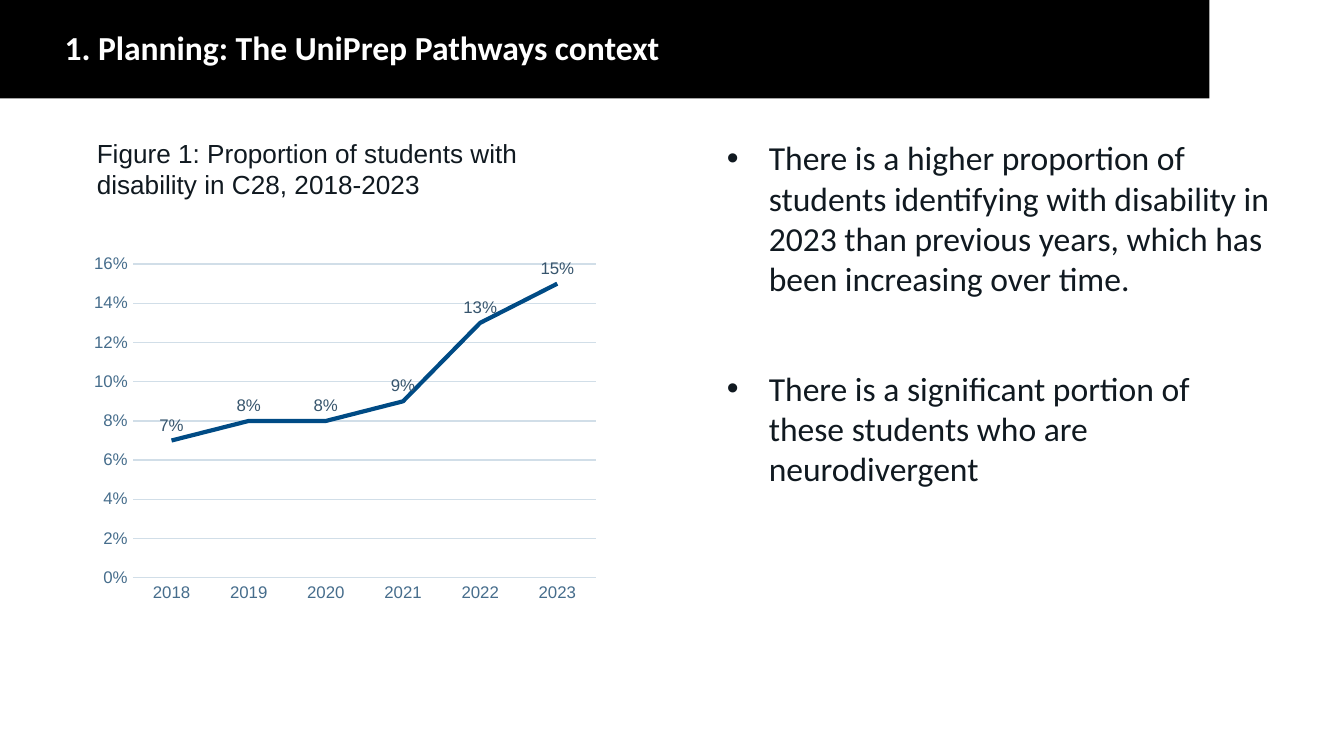
from dataclasses import dataclass

from lxml.etree import SubElement
from pptx import Presentation
from pptx.chart.data import CategoryChartData
from pptx.dml.color import RGBColor
from pptx.enum.chart import XL_CHART_TYPE, XL_LABEL_POSITION, XL_MARKER_STYLE, XL_TICK_MARK
from pptx.enum.shapes import MSO_SHAPE
from pptx.enum.text import MSO_ANCHOR
from pptx.oxml.ns import qn
from pptx.util import Cm, Pt


@dataclass(frozen=True)
class Theme:
    banner: str = "000000"
    banner_text: str = "FFFFFF"
    text: str = "101920"
    axis_text: str = "466D8C"
    label_text: str = "37556D"
    grid: str = "D1DEE8"
    series: str = "004B85"
    heading_font: str = "Calibri"
    figure_font: str = "Arial"
    body_size: int = 18
    caption_size: int = 14
    chart_size: int = 10
    axis_size: int = 9


THEME = Theme()


def set_font(font, name, size, color, bold=False):
    font.name = name
    font.size = Pt(size)
    font.bold = bold
    font.color.rgb = RGBColor.from_string(color)


def set_line(line, color, width):
    line.color.rgb = RGBColor.from_string(color)
    line.width = Pt(width)


def add_bullet(paragraph, indent):
    properties = paragraph._p.get_or_add_pPr()
    properties.set("marL", str(indent))
    properties.set("indent", str(-indent))
    SubElement(properties, qn("a:buFont"), typeface="Arial")
    SubElement(properties, qn("a:buChar"), char="•")


def add_text(slide, box, paragraphs, *, font, size, color, bold=False,
             anchor=MSO_ANCHOR.TOP, line_spacing=None, gap=0, bullet_indent=None):
    """Add a wrapping text box; gap is the space in points between paragraphs."""
    frame = slide.shapes.add_textbox(*box).text_frame
    frame.word_wrap = True
    frame.vertical_anchor = anchor
    for index, text in enumerate(paragraphs):
        paragraph = frame.add_paragraph() if index else frame.paragraphs[0]
        if index:
            paragraph.space_before = Pt(gap)
        if line_spacing:
            paragraph.line_spacing = line_spacing
        if bullet_indent:
            add_bullet(paragraph, bullet_indent)
        run = paragraph.add_run()
        run.text = text
        set_font(run.font, font, size, color, bold)


def add_banner(slide, box, title):
    left, top, width, height = box
    band = slide.shapes.add_shape(MSO_SHAPE.RECTANGLE, *box)
    band.shadow.inherit = False
    band.fill.solid()
    band.fill.fore_color.rgb = RGBColor.from_string(THEME.banner)
    band.line.fill.background()
    margin = Cm(0.97)
    add_text(slide, (left + margin, top, width - margin, height), [title],
             font=THEME.heading_font, size=THEME.body_size, color=THEME.banner_text,
             bold=True, anchor=MSO_ANCHOR.MIDDLE, line_spacing=0.9)


def add_line_chart(slide, box, proportions):
    data = CategoryChartData(number_format="0%")
    data.categories = list(proportions)
    data.add_series("Series 1", list(proportions.values()))
    chart = slide.shapes.add_chart(XL_CHART_TYPE.LINE, *box, data).chart
    chart.has_legend = False
    chart.has_title = False
    set_font(chart.font, THEME.figure_font, THEME.chart_size, THEME.text)

    for axis in (chart.category_axis, chart.value_axis):
        axis.major_tick_mark = XL_TICK_MARK.NONE
        axis.minor_tick_mark = XL_TICK_MARK.NONE
        set_font(axis.tick_labels.font, THEME.figure_font, THEME.axis_size, THEME.axis_text)
    set_line(chart.category_axis.format.line, THEME.grid, 0.75)

    value_axis = chart.value_axis
    value_axis.minimum_scale = 0
    value_axis.maximum_scale = 0.16
    value_axis.major_unit = 0.02
    value_axis.tick_labels.number_format = "0%"
    value_axis.tick_labels.number_format_is_linked = False
    value_axis.format.line.fill.background()
    set_line(value_axis.major_gridlines.format.line, THEME.grid, 0.75)

    plot = chart.plots[0]
    plot.vary_by_categories = False
    series = plot.series[0]
    series.smooth = False
    series.marker.style = XL_MARKER_STYLE.NONE
    set_line(series.format.line, THEME.series, 2.25)
    labels = series.data_labels
    labels.show_value = True
    labels.position = XL_LABEL_POSITION.ABOVE
    labels.number_format = "0%"
    labels.number_format_is_linked = False
    set_font(labels.font, THEME.figure_font, THEME.axis_size, THEME.label_text)


def add_figure(slide, box, caption, proportions):
    """Place a caption with the line chart below it."""
    left, top, width, height = box
    chart_offset = Cm(2.2)
    add_text(slide, (left, top, width, Cm(1.45)), [caption],
             font=THEME.figure_font, size=THEME.caption_size, color=THEME.text)
    add_line_chart(slide, (left, top + chart_offset, width - Cm(0.48), height - chart_offset),
                   proportions)


def add_findings(slide, box, findings):
    add_text(slide, box, findings, font=THEME.heading_font, size=THEME.body_size,
             color=THEME.text, gap=37, bullet_indent=Cm(0.79))


def main():
    presentation = Presentation()
    presentation.slide_width = Cm(25.4)
    presentation.slide_height = Cm(14.29)
    slide = presentation.slides.add_slide(presentation.slide_layouts[6])

    content_top = Cm(2.47)
    add_banner(slide, (0, 0, Cm(22.86), Cm(1.86)), "1. Planning: The UniPrep Pathways context")
    add_figure(
        slide, (Cm(1.58), content_top, Cm(10.36), Cm(9.06)),
        "Figure 1: Proportion of students with disability in C28, 2018-2023",
        {"2018": 0.07, "2019": 0.08, "2020": 0.08, "2021": 0.09, "2022": 0.13, "2023": 0.15},
    )
    add_findings(slide, (Cm(13.49), content_top, Cm(10.8), Cm(10.39)), [
        "There is a higher proportion of students identifying with disability in 2023 "
        "than previous years, which has been increasing over time.",
        "There is a significant portion of these students who are neurodivergent",
    ])
    presentation.save("out.pptx")


if __name__ == "__main__":
    main()
